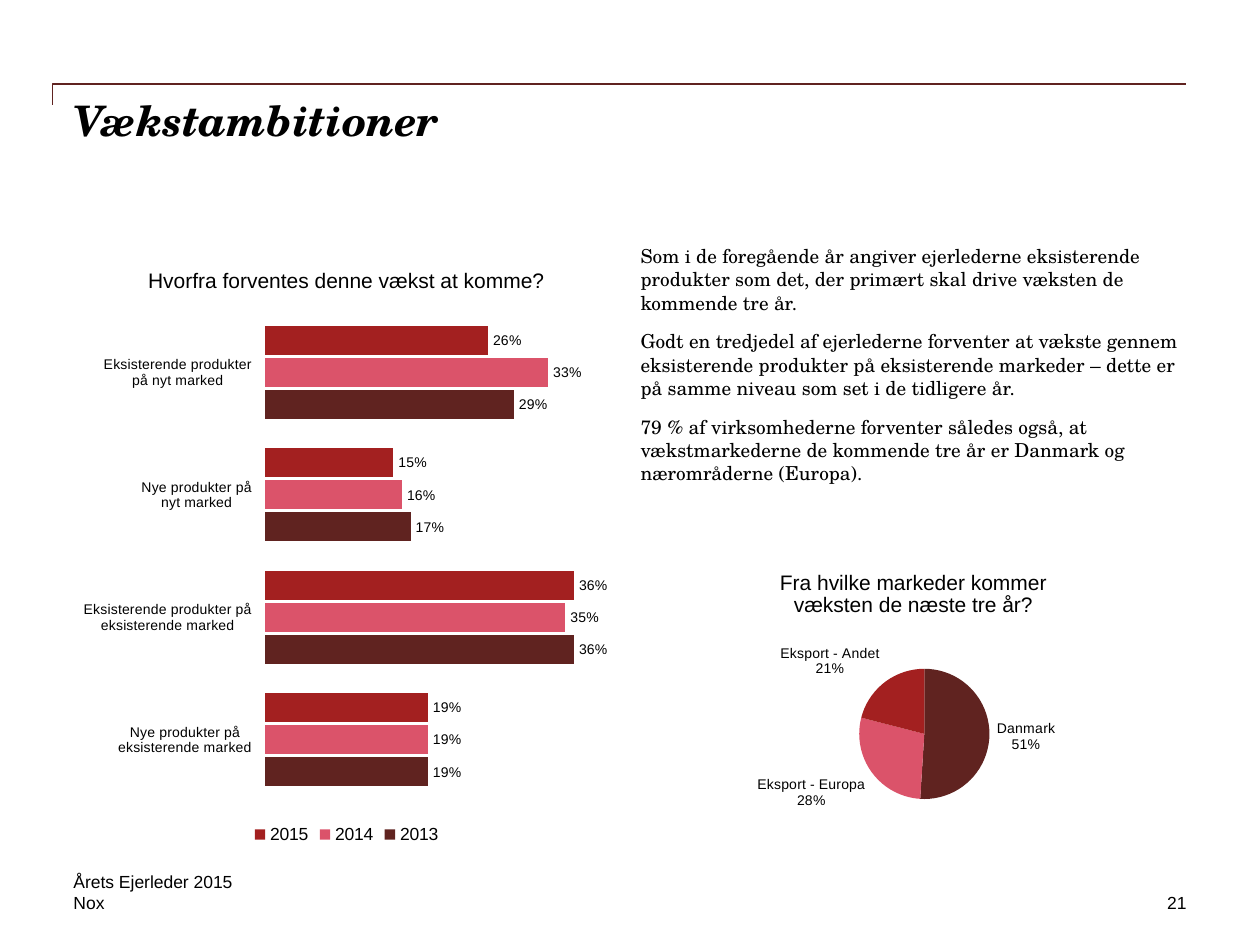
from lxml import etree
from pptx import Presentation, util as u
from pptx.chart.data import CategoryChartData
from pptx.dml.color import RGBColor
from pptx.enum import chart as charts, text
from pptx.oxml.ns import qn

UNIT = u.Inches(10) // 120
SANS, SERIF = "Arial", "TeX Gyre Schola"
BLACK, MAROON, PINK, RED = "000000", "602320", "DB536A", "A32020"


def color(value):
    return RGBColor.from_string(value)


def grid(*lengths):
    return [round(length * UNIT) for length in lengths]


def style(font, size, name=SANS, bold=False, italic=False):
    font.size, font.name = u.Pt(size), name
    font.bold, font.italic = bold, italic
    font.color.rgb = color(BLACK)


def add_text(slide, box, paragraphs, size, name=SANS, emphasis=False,
             align=text.PP_ALIGN.LEFT, anchor=text.MSO_ANCHOR.TOP, after=0):
    frame = slide.shapes.add_textbox(*grid(*box)).text_frame
    frame.word_wrap = True
    frame.vertical_anchor = anchor
    frame.margin_left = frame.margin_right = frame.margin_top = frame.margin_bottom = 0
    for index, words in enumerate(paragraphs):
        paragraph = frame.add_paragraph() if index else frame.paragraphs[0]
        paragraph.alignment = align
        paragraph.space_after = u.Pt(after)
        run = paragraph.add_run()
        run.text = words
        style(run.font, size, name, emphasis, emphasis)


def add_header(slide, box, title):
    left, top, width, height = box
    builder = slide.shapes.build_freeform(*grid(left, top + height))
    builder.add_line_segments([grid(left, top), grid(left + width, top)], close=False)
    rule = builder.convert_to_shape()
    rule.shadow.inherit = False
    rule.fill.background()
    rule.line.color.rgb = color(MAROON)
    rule.line.width = u.Pt(1)
    add_text(slide, (left + 2, top + 1, width - 2, 12), [title], 24, SERIF, emphasis=True)


def set_title(chart, lines):
    chart.has_title = True
    frame = chart.chart_title.text_frame
    for index, line in enumerate(lines):
        paragraph = frame.add_paragraph() if index else frame.paragraphs[0]
        run = paragraph.add_run()
        run.text = line
        style(run.font, 12)
    chart.chart_title.include_in_layout = False


def set_plot_box(chart, shares):
    area = chart._chartSpace.chart.plotArea
    for old in area.findall(qn("c:layout")):
        area.remove(old)
    layout = etree.Element(qn("c:layout"))
    area.insert(0, layout)
    manual = etree.SubElement(layout, qn("c:manualLayout"))
    settings = [("layoutTarget", "inner"), ("xMode", "edge"), ("yMode", "edge")]
    settings += zip("xywh", shares)
    for tag, value in settings:
        etree.SubElement(manual, qn(f"c:{tag}")).set("val", str(value))


def add_labels(plot, with_category=False):
    plot.has_data_labels = True
    labels = plot.data_labels
    labels.show_value = True
    labels.show_category_name = with_category
    labels.number_format, labels.number_format_is_linked = "0%", False
    labels.position = charts.XL_LABEL_POSITION.OUTSIDE_END
    style(labels.font, 8)


def add_chart(slide, box, kind, title, categories, series, plot_box):
    data = CategoryChartData(number_format="0%")
    data.categories = categories
    for name, values in series:
        data.add_series(name, values)
    chart = slide.shapes.add_chart(kind, *grid(*box), data).chart
    style(chart.font, 10)
    set_title(chart, title)
    set_plot_box(chart, plot_box)
    return chart


def add_source_chart(slide, box):
    categories = ["Nye produkter på\neksisterende marked",
                  "Eksisterende produkter på\neksisterende marked",
                  "Nye produkter på\nnyt marked",
                  "Eksisterende produkter\npå nyt marked"]
    series = [("2013", (0.19, 0.36, 0.17, 0.29)),
              ("2014", (0.19, 0.35, 0.16, 0.33)),
              ("2015", (0.19, 0.36, 0.15, 0.26))]
    chart = add_chart(slide, box, charts.XL_CHART_TYPE.BAR_CLUSTERED,
                      ["Hvorfra forventes denne vækst at komme?"],
                      categories, series, (0.35, 0.11, 0.63, 0.81))
    plot = chart.plots[0]
    plot.gap_width, plot.overlap, plot.vary_by_categories = 100, -10, False
    add_labels(plot)
    for bars, fill in zip(plot.series, (MAROON, PINK, RED)):
        bars.format.fill.solid()
        bars.format.fill.fore_color.rgb = color(fill)
    style(chart.category_axis.tick_labels.font, 8)
    chart.category_axis.format.line.fill.background()
    chart.value_axis.minimum_scale, chart.value_axis.maximum_scale = 0, 0.4
    chart.value_axis.major_unit = 0.2
    chart.value_axis.has_major_gridlines = False
    chart.value_axis.visible = False
    chart.has_legend = True
    chart.legend.position = charts.XL_LEGEND_POSITION.BOTTOM
    chart.legend.include_in_layout = False
    style(chart.legend.font, 10)


def add_market_chart(slide, box):
    chart = add_chart(slide, box, charts.XL_CHART_TYPE.PIE,
                      ["Fra hvilke markeder kommer", "væksten de næste tre år?"],
                      ["Danmark", "Eksport - Europa", "Eksport - Andet"],
                      [("Andel", (0.51, 0.28, 0.21))], (0.4, 0.39, 0.24, 0.44))
    chart.has_legend = False
    plot = chart.plots[0]
    add_labels(plot, with_category=True)
    separator = etree.Element(qn("c:separator"))
    separator.text = "\n"
    plot.data_labels._element.find(qn("c:showBubbleSize")).addnext(separator)
    for index, fill in enumerate((MAROON, PINK, RED)):
        point = plot.series[0].points[index]
        point.format.fill.solid()
        point.format.fill.fore_color.rgb = color(fill)


def add_findings(slide, box):
    add_text(slide, box, [
        "Som i de foregående år angiver ejerlederne eksisterende produkter som det, "
        "der primært skal drive væksten de kommende tre år.",
        "Godt en tredjedel af ejerlederne forventer at vækste gennem eksisterende "
        "produkter på eksisterende markeder – dette er på samme niveau som set i de "
        "tidligere år.",
        "79 % af virksomhederne forventer således også, at vækstmarkederne de kommende "
        "tre år er Danmark og nærområderne (Europa).",
    ], 11, SERIF, after=9)


def add_footer(slide, box):
    left, top, width, height = box
    row = height / 2
    add_text(slide, (left, top, width * 0.65, row), ["Årets Ejerleder 2015"], 10,
             anchor=text.MSO_ANCHOR.BOTTOM)
    add_text(slide, (left, top + row, width * 0.32, row), ["Nox"], 10)
    add_text(slide, (left + width - 20, top + row, 20, row), ["21"], 10,
             align=text.PP_ALIGN.RIGHT)


def main():
    presentation = Presentation()
    presentation.slide_width, presentation.slide_height = grid(120, 90)
    slide = presentation.slides.add_slide(presentation.slide_layouts[6])
    left, middle, column, top, bottom = 7, 61, 52, 23.3, 80.9
    add_header(slide, (5, 8, 108, 2), "Vækstambitioner")
    add_findings(slide, (middle, top, column, 27.4))
    add_source_chart(slide, (left, top, column, bottom - top))
    add_market_chart(slide, (middle, 52.7, column, bottom - 52.7))
    add_footer(slide, (left, 83, 106, 4))
    presentation.save("out.pptx")


if __name__ == "__main__":
    main()
